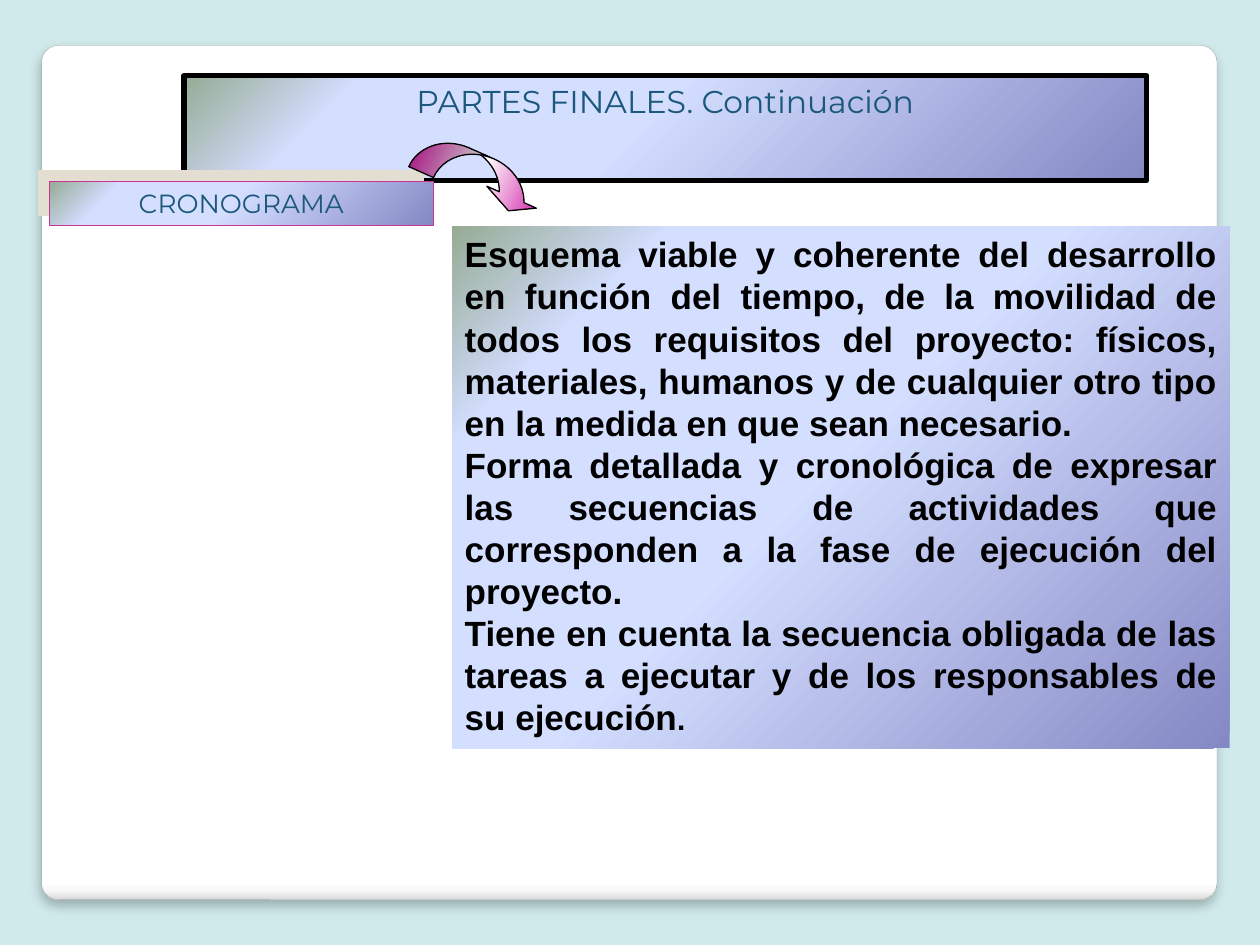
from lxml.etree import SubElement
from pptx import Presentation
from pptx.dml.color import RGBColor
from pptx.enum.shapes import MSO_SHAPE
from pptx.enum.text import MSO_ANCHOR, MSO_AUTO_SIZE, PP_ALIGN
from pptx.oxml.ns import qn
from pptx.util import Inches, Pt

BACKGROUND = RGBColor(0xD0, 0xEA, 0xEC)
WHITE = RGBColor(0xFF, 0xFF, 0xFF)
PALE_GRAY = RGBColor(0xF7, 0xF7, 0xF7)
LIGHT_GRAY = RGBColor(0xDA, 0xDA, 0xDA)
EDGE_GRAY = RGBColor(0xA4, 0xA4, 0xA4)
BLACK = RGBColor(0x00, 0x00, 0x00)
VIOLET = RGBColor(0x84, 0x88, 0xC4)
PALE_BLUE = RGBColor(0xD4, 0xDE, 0xFF)
SAGE = RGBColor(0x96, 0xAB, 0x94)
PINK = RGBColor(0xCC, 0x33, 0x99)
MAGENTA = RGBColor(0xCC, 0x00, 0x99)
SAND = RGBColor(0xE3, 0xDE, 0xD1)
TEAL = RGBColor(0x1B, 0x58, 0x7C)

CARD_GRADIENT = ([(0, WHITE), (98, WHITE), (99, PALE_GRAY), (100, LIGHT_GRAY)], 90)
PANEL_GRADIENT = ([(0, VIOLET), (53, PALE_BLUE), (83, PALE_BLUE), (100, SAGE)], 225)
ARROW_GRADIENT = ([(0, MAGENTA), (50, WHITE), (100, MAGENTA)], 90)

BODY = [
    [("Esquema viable y coherente del desarrollo en función del tiempo, de la "
      "movilidad de todos los requisitos del proyecto: físicos, materiales, humanos "
      "y de cualquier otro tipo en la medida en que sean necesario.", 20)],
    [("Forma detallada y cronológica de expresar las secuencias de actividades que "
      "corresponden a la fase de ejecución del proyecto.", 20)],
    [("Tiene en cuenta la secuencia obligada de las tareas a ejecutar y de los "
      "responsables de su ejecución", 20), (".", 17)],
]


def set_attributes(target, values):
    for name, value in values.items():
        setattr(target, name, value)


def add_color(parent, color, alpha=100):
    element = SubElement(parent, qn("a:srgbClr"), val=str(color))
    if alpha < 100:
        SubElement(element, qn("a:alpha"), val=str(alpha * 1000))


def fill_gradient(shape, stops, angle):
    shape.fill.gradient()
    gradient = shape.element.spPr.find(qn("a:gradFill"))
    stop_list = gradient.find(qn("a:gsLst"))
    stop_list.clear()
    for position, color in stops:
        add_color(SubElement(stop_list, qn("a:gs"), pos=str(position * 1000)), color)
    gradient.find(qn("a:lin")).set("ang", str(angle * 60000))


def add_shadow(shape, color, alpha, blur, distance, angle):
    effects = shape.element.spPr.find(qn("a:effectLst"))
    shadow = SubElement(effects, qn("a:outerShdw"), blurRad=str(Pt(blur)),
                        dist=str(Pt(distance)), dir=str(angle * 60000),
                        algn="ctr", rotWithShape="0")
    add_color(shadow, color, alpha)


def style_shape(shape, box, gradient, line=None):
    names = ("left", "top", "width", "height")
    set_attributes(shape, dict(zip(names, map(Inches, box))))
    fill_gradient(shape, *gradient)
    if line:
        color, width = line
        shape.line.color.rgb = color
        shape.line.width = Pt(width)
    else:
        shape.line.fill.background()
    shape.shadow.inherit = False
    return shape


def add_styled_shape(slide, kind, box, gradient, line=None):
    shape = slide.shapes.add_shape(kind, *map(Inches, box))
    return style_shape(shape, box, gradient, line)


def write_text(shape, paragraphs, frame_format, paragraph_format, font_format, color):
    frame = shape.text_frame
    set_attributes(frame, {"word_wrap": True, **frame_format})
    for index, runs in enumerate(paragraphs):
        paragraph = frame.add_paragraph() if index else frame.paragraphs[0]
        set_attributes(paragraph, paragraph_format)
        for text, size in runs:
            run = paragraph.add_run()
            run.text = text
            set_attributes(run.font, {"size": Pt(size), **font_format})
            run.font.color.rgb = color


def write_heading(shape, text, size):
    write_text(shape, [[(text, size)]],
               {"auto_size": MSO_AUTO_SIZE.SHAPE_TO_FIT_TEXT,
                "vertical_anchor": MSO_ANCHOR.TOP},
               {"alignment": PP_ALIGN.CENTER}, {"name": "Montserrat"}, TEAL)


def add_card(slide):
    card = add_styled_shape(slide, MSO_SHAPE.ROUNDED_RECTANGLE,
                            (0.33, 0.36, 9.33, 6.78), CARD_GRADIENT, (EDGE_GRAY, 0.16))
    card.adjustments[0] = 0.02
    add_shadow(card, BLACK, 25, 6, 4, 90)
    slide.shapes.title.element.addprevious(card.element)


def add_title(slide):
    title = style_shape(slide.shapes.title, (1.46, 0.6, 7.64, 0.4),
                        PANEL_GRADIENT, (BLACK, 3))
    write_heading(title, "PARTES FINALES. Continuación", 18)


def add_label(slide):
    label = add_styled_shape(slide, MSO_SHAPE.RECTANGLE, (0.39, 1.44, 3.05, 0.35),
                             PANEL_GRADIENT, (PINK, 0.75))
    add_shadow(label, SAND, 100, 0, 8.5, 225)
    write_heading(label, "CRONOGRAMA", 15)


def add_curved_arrow(slide):
    arrow = add_styled_shape(slide, MSO_SHAPE.CURVED_LEFT_ARROW,
                             (3.64, 0.85, 0.33, 1.08), ARROW_GRADIENT, (BLACK, 0.75))
    arrow.rotation = 293.9
    for index, value in enumerate((0.65, 1.3, 0.33)):
        arrow.adjustments[index] = value


def add_body(slide):
    panel = add_styled_shape(slide, MSO_SHAPE.RECTANGLE, (3.59, 1.8, 6.17, 4.14),
                             PANEL_GRADIENT)
    write_text(panel, BODY,
               {"auto_size": MSO_AUTO_SIZE.NONE, "vertical_anchor": MSO_ANCHOR.TOP},
               {"alignment": PP_ALIGN.JUSTIFY, "line_spacing": Pt(24)},
               {"name": "Arial", "bold": True}, BLACK)


def main():
    presentation = Presentation()
    set_attributes(presentation, {"slide_width": Inches(10), "slide_height": Inches(7.5)})
    slide = presentation.slides.add_slide(presentation.slide_layouts[5])
    slide.background.fill.solid()
    slide.background.fill.fore_color.rgb = BACKGROUND
    add_card(slide)
    add_title(slide)
    add_label(slide)
    add_curved_arrow(slide)
    add_body(slide)
    presentation.save("out.pptx")


if __name__ == "__main__":
    main()
